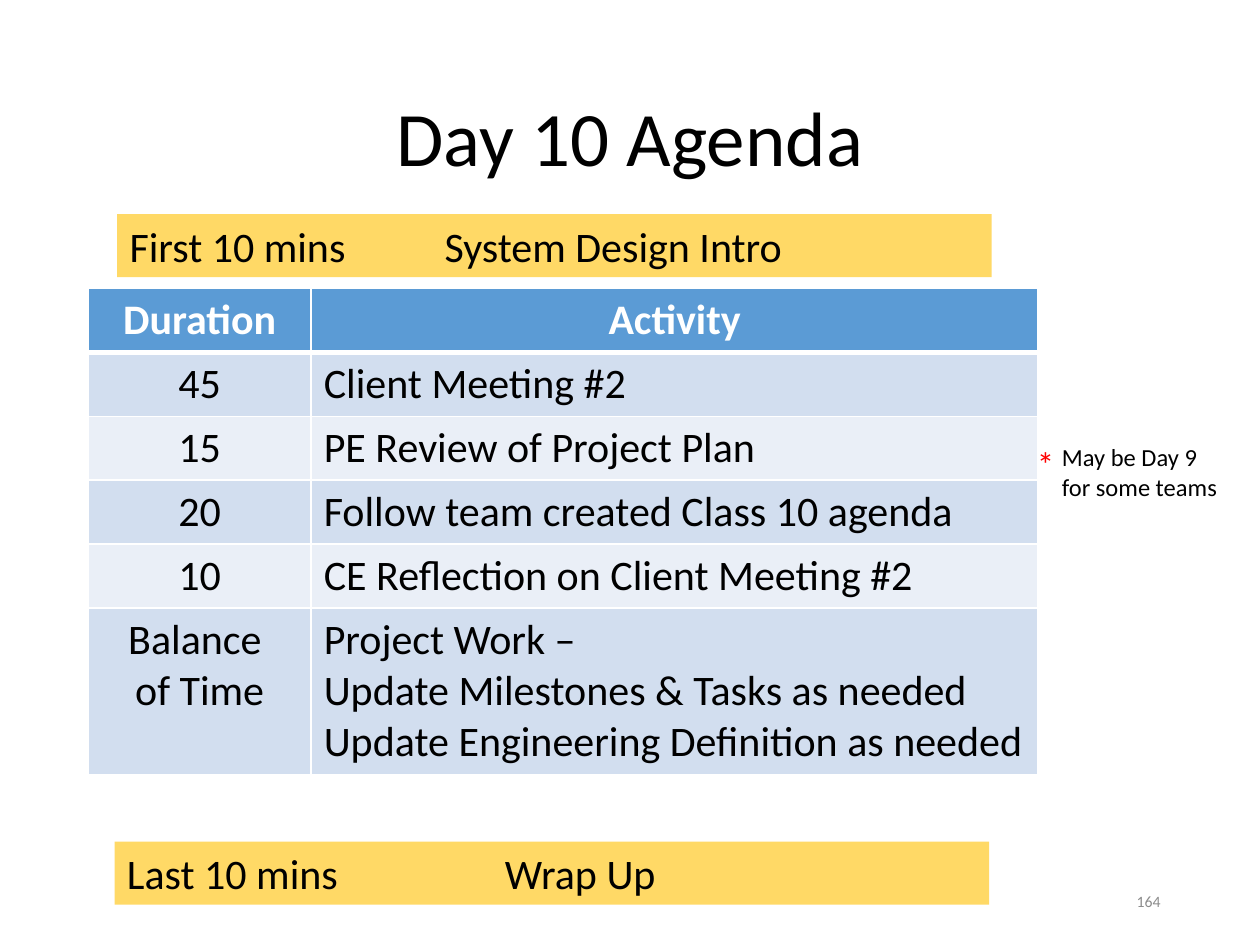
from lxml import etree
from pptx import Presentation
from pptx import util as u
from pptx.dml.color import RGBColor
from pptx.enum import shapes, text
from pptx.oxml.ns import qn

COLORS = {"black": "000000", "white": "FFFFFF", "red": "FF0000", "grey": "8C8C8C",
          "header": "5B9BD5", "odd": "D2DEEF", "even": "EAEFF7", "banner": "FFD966"}
LEFT, CENTER, RIGHT = text.PP_ALIGN.LEFT, text.PP_ALIGN.CENTER, text.PP_ALIGN.RIGHT
MIDDLE, TOP = text.MSO_ANCHOR.MIDDLE, text.MSO_ANCHOR.TOP


def write(frame, wording, size, color="black", align=LEFT, bold=False):
    """Fill a text frame, one paragraph for each line of wording."""
    frame.word_wrap = True
    for number, line in enumerate(wording.split("\n")):
        para = frame.add_paragraph() if number else frame.paragraphs[0]
        para.alignment = align
        span = para.add_run()
        span.text = line
        for name, value in {"name": "Calibri", "size": u.Pt(size), "bold": bold}.items():
            setattr(span.font, name, value)
        span.font.color.rgb = RGBColor.from_string(COLORS[color])


def set_borders(cell, widths):
    """Draw white cell borders; widths maps the side letter to points."""
    properties = cell._tc.get_or_add_tcPr()
    for place, (side, points) in enumerate(widths.items()):
        line = etree.Element(qn(f"a:ln{side}"), w=str(u.Pt(points)))
        fill = etree.SubElement(line, qn("a:solidFill"))
        etree.SubElement(fill, qn("a:srgbClr"), val=COLORS["white"])
        properties.insert(place, line)


deck = Presentation()
deck.slide_width, deck.slide_height = u.Inches(10), u.Inches(7.5)
page = deck.slides.add_slide(deck.slide_layouts[5])

# Title
title = page.shapes.title
for name, value in {"left": 0.69, "top": 0.4, "width": 8.62, "height": 1.45}.items():
    setattr(title, name, u.Inches(value))
title.text_frame.vertical_anchor = MIDDLE
write(title.text_frame, "Day 10 Agenda", 44, align=CENTER)
title.text_frame.paragraphs[0].line_spacing = 0.9

# Agenda table
agenda = [
    ("Duration", "Activity"),
    ("45", "Client Meeting #2"),
    ("15", "PE Review of Project Plan"),
    ("20", "Follow team created Class 10 agenda"),
    ("10", "CE Reflection on Client Meeting #2"),
    ("Balance \nof Time", "Project Work –\nUpdate Milestones & Tasks as needed\n"
                          "Update Engineering Definition as needed"),
]
table = page.shapes.add_table(len(agenda), 2, u.Inches(0.7), u.Inches(2.29),
                              u.Inches(7.54), u.Inches(3.8)).table
for column, width in zip(table.columns, (1.77, 5.77)):
    column.width = u.Inches(width)
for r, entries in enumerate(agenda):
    table.rows[r].height = u.Inches(0.41)
    header = r == 0
    fill = "header" if header else "odd" if r % 2 else "even"
    for c, wording in enumerate(entries):
        cell = table.cell(r, c)
        cell.fill.solid()
        cell.fill.fore_color.rgb = RGBColor.from_string(COLORS[fill])
        write(cell.text_frame, wording, 24, "white" if header else "black",
              CENTER if header or c == 0 else LEFT, header)
        set_borders(cell, {"L": 1, "R": 1, "T": 3 if r == 1 else 1, "B": 3 if header else 1})

# Side note with its asterisk, and page number
notes = [
    ("May be Day 9 for some teams", (8.33, 3.46, 1.5, 0.57), 14, "black", LEFT, TOP),
    ("*", (8.13, 3.46, 0.42, 0.44), 20, "red", LEFT, TOP),
    ("164", (7.06, 6.95, 2.25, 0.4), 9, "grey", RIGHT, MIDDLE),
]
for wording, place, size, color, align, anchor in notes:
    box = page.shapes.add_textbox(*map(u.Inches, place))
    box.text_frame.vertical_anchor = anchor
    write(box.text_frame, wording, size, color, align)

# Opening and closing banners
banners = [("First 10 mins\t\tSystem Design Intro", 0.93, 1.7),
           ("Last 10 mins\t\t\tWrap Up", 0.91, 6.68)]
for wording, left, top in banners:
    banner = page.shapes.add_shape(shapes.MSO_SHAPE.RECTANGLE, u.Inches(left), u.Inches(top),
                                   u.Inches(6.94), u.Inches(0.5))
    banner.shadow.inherit = False
    banner.fill.solid()
    banner.fill.fore_color.rgb = RGBColor.from_string(COLORS["banner"])
    banner.line.fill.background()
    banner.text_frame.vertical_anchor = TOP
    write(banner.text_frame, wording, 24)

deck.save("out.pptx")
